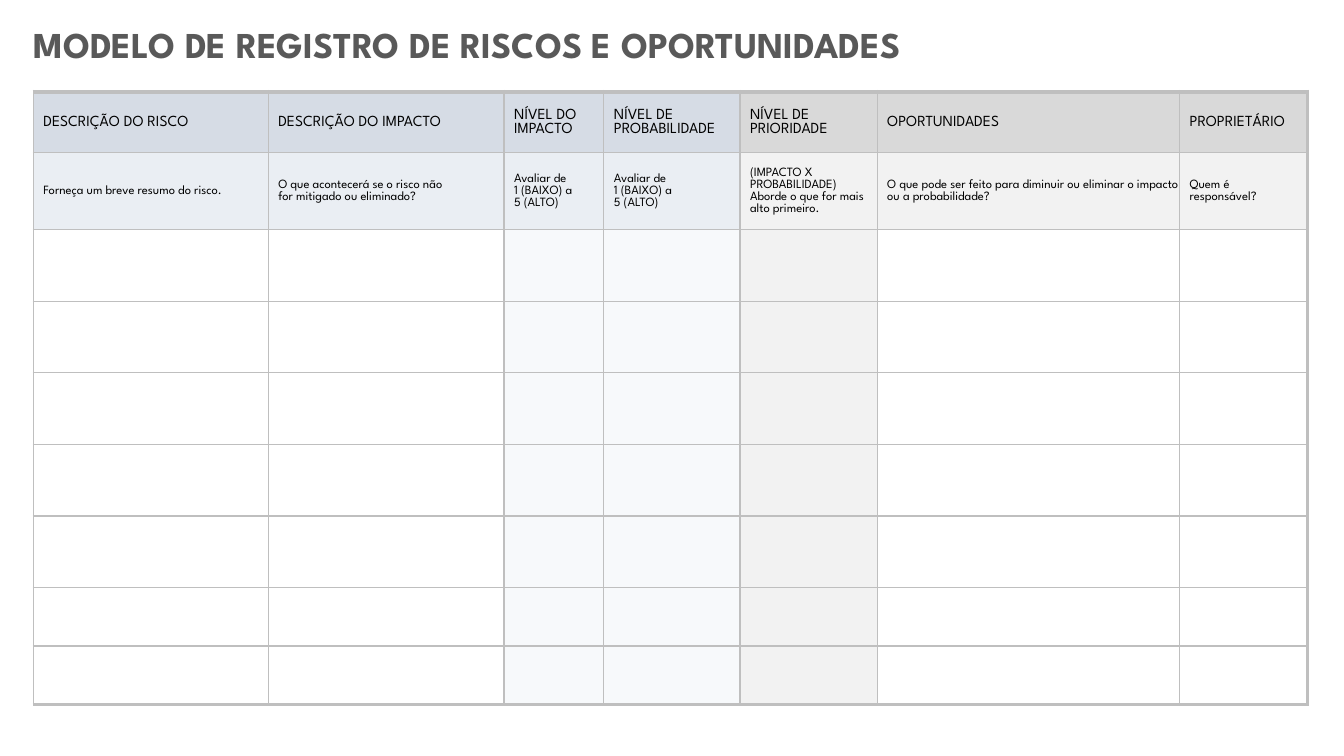
"""Build a risk and opportunity register slide."""
from dataclasses import dataclass

from lxml import etree
from pptx import Presentation
from pptx.dml.color import RGBColor
from pptx.enum.text import MSO_ANCHOR, MSO_AUTO_SIZE, PP_ALIGN
from pptx.oxml.ns import qn
from pptx.util import Emu, Pt

TOP, MIDDLE = MSO_ANCHOR.TOP, MSO_ANCHOR.MIDDLE
LEFT = PP_ALIGN.LEFT
NO_AUTOFIT = MSO_AUTO_SIZE.NONE
TITLE_ONLY = 5
EMU_PER_PX = 9144


@dataclass(frozen=True)
class Theme:
    font: str = "League Spartan"
    title: str = "595959"
    text: str = "000000"
    border: str = "BFBFBF"
    white: str = "FFFFFF"
    blue_head: str = "D6DCE5"
    blue_hint: str = "EAEEF3"
    blue_body: str = "F7F9FB"
    grey_head: str = "D9D9D9"
    grey_light: str = "F2F2F2"
    title_pt: int = 26
    head_pt: int = 11
    hint_pt: int = 9
    thin_pt: float = 1
    edge_pt: float = 2.25
    top_pt: float = 3


@dataclass(frozen=True)
class Column:
    width: int
    head: str
    hint: str
    head_fill: str
    hint_fill: str
    body_fill: str


T = Theme()
BLUE = (T.blue_head, T.blue_hint)
GREY = (T.grey_head, T.grey_light)
RATING = "Avaliar de\v1 (BAIXO) a\v5 (ALTO)"
COLUMNS = [
    Column(233, "DESCRIÇÃO DO RISCO", "Forneça um breve resumo do risco.",
           *BLUE, T.white),
    Column(234, "DESCRIÇÃO DO IMPACTO",
           "O que acontecerá se o risco não\vfor mitigado ou eliminado?",
           *BLUE, T.white),
    Column(99, "NÍVEL DO\vIMPACTO", RATING, *BLUE, T.blue_body),
    Column(135, "NÍVEL DE PROBABILIDADE", RATING, *BLUE, T.blue_body),
    Column(136, "NÍVEL DE PRIORIDADE",
           "(IMPACTO X\vPROBABILIDADE)\vAborde o que for mais alto primeiro.",
           *GREY, T.grey_light),
    Column(300, "OPORTUNIDADES",
           "O que pode ser feito para diminuir ou eliminar o impacto "
           "ou a probabilidade?", *GREY, T.white),
    Column(127, "PROPRIETÁRIO", "Quem é\nresponsável?", *GREY, T.white),
]
ROW_HEIGHTS = [60, 77] + [71] * 5 + [58] * 2


def px(n: int) -> Emu:
    return Emu(n * EMU_PER_PX)


def write(tf, text: str, *, size: float, color: str, bold: bool = False) -> None:
    tf.text = text
    for p in tf.paragraphs:
        p.alignment = LEFT
        for r in p.runs:
            r.font.name = T.font
            r.font.size = Pt(size)
            r.font.bold = bold
            r.font.color.rgb = RGBColor.from_string(color)


def set_borders(cell, widths: dict[str, float]) -> None:
    tc_pr = cell._tc.get_or_add_tcPr()
    for i, (side, width) in enumerate(widths.items()):
        ln = etree.Element(qn(f"a:ln{side}"), w=str(Pt(width)))
        fill = etree.SubElement(ln, qn("a:solidFill"))
        etree.SubElement(fill, qn("a:srgbClr"), val=T.border)
        tc_pr.insert(i, ln)


def add_cell(cell, text: str, *, size: float, fill: str,
             borders: dict[str, float]) -> None:
    cell.margin_left, cell.margin_right = px(10), px(1)
    cell.margin_top, cell.margin_bottom = px(1), px(0)
    cell.vertical_anchor = MIDDLE
    cell.fill.solid()
    cell.fill.fore_color.rgb = RGBColor.from_string(fill)
    set_borders(cell, borders)
    if text:
        write(cell.text_frame, text, size=size, color=T.text)


def add_title(slide, text: str) -> None:
    sp = slide.shapes.title
    sp.left, sp.top, sp.width, sp.height = px(23), px(17), px(1142), px(54)
    tf = sp.text_frame
    tf.word_wrap = True
    tf.auto_size = NO_AUTOFIT
    tf.vertical_anchor = TOP
    write(tf, text, size=T.title_pt, color=T.title, bold=True)


def add_register(slide) -> None:
    width, height = sum(c.width for c in COLUMNS), sum(ROW_HEIGHTS)
    last_row, last_col = len(ROW_HEIGHTS) - 1, len(COLUMNS) - 1
    table = slide.shapes.add_table(len(ROW_HEIGHTS), len(COLUMNS), px(33),
                                   px(91), px(width), px(height)).table
    table.first_row = table.horz_banding = False
    for row, row_height in zip(table.rows, ROW_HEIGHTS):
        row.height = px(row_height)
    for j, col in enumerate(COLUMNS):
        table.columns[j].width = px(col.width)
        for i in range(len(ROW_HEIGHTS)):
            text, size, fill = {
                0: (col.head, T.head_pt, col.head_fill),
                1: (col.hint, T.hint_pt, col.hint_fill),
            }.get(i, ("", T.hint_pt, col.body_fill))
            borders = {
                "L": T.thin_pt,
                "R": T.edge_pt if j == last_col else T.thin_pt,
                "T": T.top_pt if i == 0 else T.thin_pt,
                "B": T.edge_pt if i == last_row else T.thin_pt,
            }
            add_cell(table.cell(i, j), text, size=size, fill=fill,
                     borders=borders)


def main() -> None:
    prs = Presentation()
    prs.slide_width, prs.slide_height = px(1333), px(750)
    slide = prs.slides.add_slide(prs.slide_layouts[TITLE_ONLY])
    add_title(slide, "MODELO DE REGISTRO DE RISCOS E OPORTUNIDADES")
    add_register(slide)
    prs.save("out.pptx")


if __name__ == "__main__":
    main()
